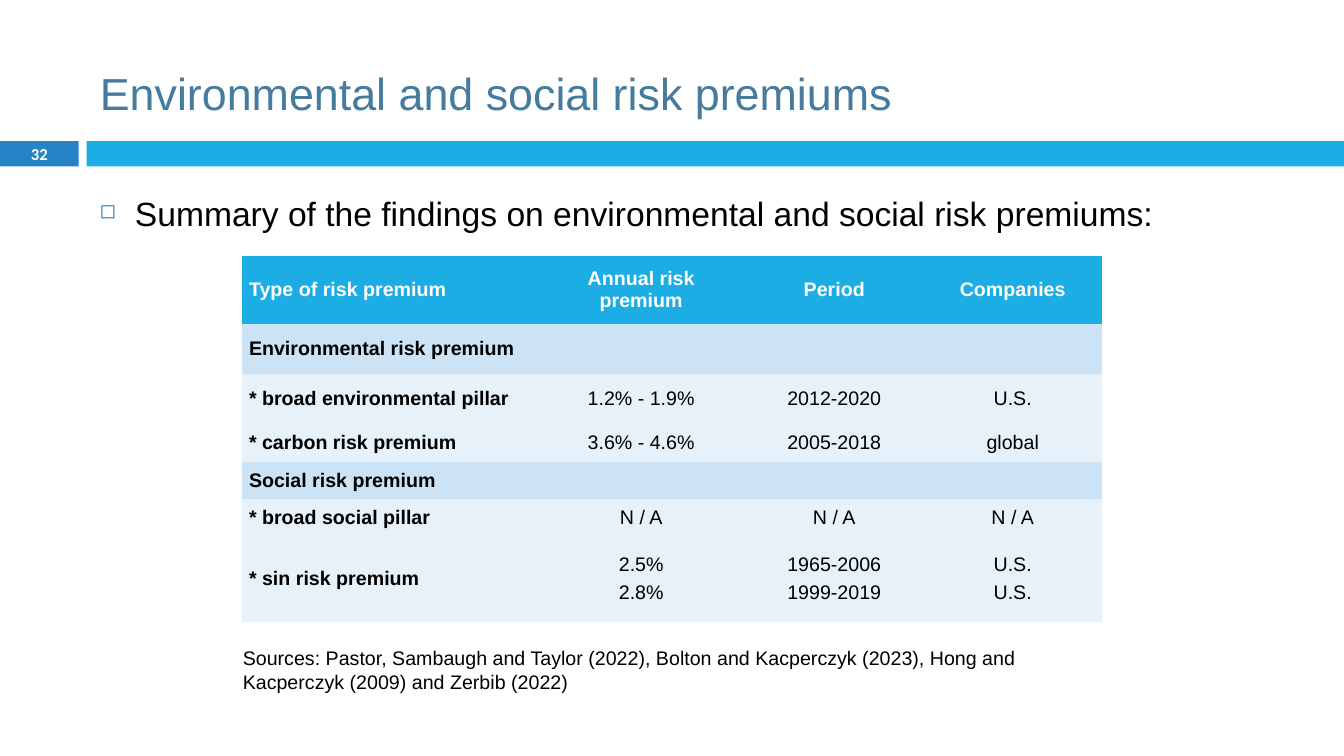
from lxml import etree
from pptx import Presentation
from pptx.dml.color import RGBColor
from pptx.enum.shapes import MSO_SHAPE as Shape
from pptx.enum.text import MSO_ANCHOR as Anchor, MSO_AUTO_SIZE as AutoSize, PP_ALIGN as Align
from pptx.oxml.ns import qn
from pptx.util import Inches, Pt

WHITE = RGBColor(0xFF, 0xFF, 0xFF)
BLACK = RGBColor(0, 0, 0)
TITLE_BLUE = RGBColor(0x45, 0x7B, 0x9E)
DARK_BLUE = RGBColor(0x26, 0x83, 0xC6)
BRIGHT_BLUE = RGBColor(0x1C, 0xAD, 0xE4)
SECTION_BLUE = RGBColor(0xCC, 0xE3, 0xF5)
PALE_BLUE = RGBColor(0xE7, 0xF1, 0xFA)
PLAIN_TABLE = "{2D5ABB26-0587-4C30-8999-92F81FD0307C}"

HEADER = ["Type of risk premium", "Annual risk premium", "Period", "Companies"]
ROWS = [
    HEADER,
    ["Environmental risk premium"],
    ["* broad environmental pillar", "1.2% - 1.9%", "2012-2020", "U.S."],
    ["* carbon risk premium", "3.6% - 4.6%", "2005-2018", "global"],
    ["Social risk premium"],
    ["* broad social pillar", "N / A", "N / A", "N / A"],
    ["* sin risk premium", "2.5%\n2.8%", "1965-2006\n1999-2019", "U.S.\nU.S."],
]
COLUMN_WIDTHS = [2.93, 2.06, 1.77, 1.77]
ROW_HEIGHTS = [0.67, 0.5, 0.5, 0.37, 0.37, 0.37, 0.85]


class SlideBuilder:
    """Holds the text style and the current page."""

    def __init__(self, page, font="Arial"):
        self.page = page
        self.font = font

    def style(self, para, size, color=BLACK, bold=False, align=Align.LEFT, font=None):
        para.font.name = font or self.font
        para.font.size = Pt(size)
        para.font.bold = bold
        para.font.color.rgb = color
        para.alignment = align

    def title(self, text, left, top, width, height):
        box = self.page.shapes.title
        box.left, box.top, box.width, box.height = map(Inches, (left, top, width, height))
        frame = box.text_frame
        frame.text = text
        frame.auto_size = AutoSize.NONE
        frame.vertical_anchor = Anchor.MIDDLE
        self.style(frame.paragraphs[0], 32, TITLE_BLUE)
        frame.paragraphs[0].line_spacing = 1.5

    def bar(self, left, top, width, height, color):
        bar = self.page.shapes.add_shape(
            Shape.RECTANGLE, *map(Inches, (left, top, width, height)))
        bar.shadow.inherit = False
        bar.fill.solid()
        bar.fill.fore_color.rgb = color
        bar.line.fill.background()

    def text(self, text, left, top, width, height, size, anchor=Anchor.TOP, **style):
        box = self.page.shapes.add_textbox(*map(Inches, (left, top, width, height)))
        frame = box.text_frame
        frame.word_wrap = True
        frame.vertical_anchor = anchor
        para = frame.paragraphs[0]
        para.text = text
        self.style(para, size, **style)
        return para

    def bullet(self, text, left, top, width, height):
        para = self.text(text, left, top, width, height, 24, align=Align.JUSTIFY)
        para.line_spacing = 1.5
        para.space_before = Pt(7)
        props = para._p.get_or_add_pPr()
        props.set("marL", str(Inches(0.35)))
        props.set("indent", str(-Inches(0.35)))
        # Bullet marks stand before the default run properties
        defaults = props.find(qn("a:defRPr"))
        color = etree.Element(qn("a:buClr"))
        etree.SubElement(color, qn("a:srgbClr"), val=str(DARK_BLUE))
        size = etree.Element(qn("a:buSzPct"), val="60000")
        mark = etree.Element(qn("a:buChar"), char="◻")
        for item in (color, size, mark):
            defaults.addprevious(item)

    def table(self, rows, left, top, widths, heights):
        holder = self.page.shapes.add_table(
            len(rows), len(widths), Inches(left), Inches(top),
            Inches(sum(widths)), Inches(sum(heights)))
        next(holder._element.iter(qn("a:tableStyleId"))).text = PLAIN_TABLE
        table = holder.table
        table.horz_banding = False
        for column, width in zip(table.columns, widths):
            column.width = Inches(width)
        for r, (values, height) in enumerate(zip(rows, heights)):
            table.rows[r].height = Inches(height)
            fill = BRIGHT_BLUE if r == 0 else SECTION_BLUE if len(values) == 1 else PALE_BLUE
            for c in range(len(widths)):
                value = values[c] if c < len(values) else ""
                self.cell(table.cell(r, c), value, fill, header=r == 0, label=c == 0)

    def cell(self, cell, value, fill, header, label):
        cell.fill.solid()
        cell.fill.fore_color.rgb = fill
        cell.vertical_anchor = Anchor.MIDDLE
        cell.margin_left = cell.margin_right = Inches(0.07)
        cell.margin_top = cell.margin_bottom = 0
        cell.text = value
        for para in cell.text_frame.paragraphs:
            self.style(para, 14, WHITE if header else BLACK, header or label,
                       Align.LEFT if label else Align.CENTER)
            para.space_before = para.space_after = Pt(3 if header else 2)


def main():
    deck = Presentation()
    deck.slide_width, deck.slide_height = Inches(13.33), Inches(7.5)
    builder = SlideBuilder(deck.slides.add_slide(deck.slide_layouts[5]))

    # Title, band and page number
    builder.bar(0, 1.4, 0.78, 0.25, DARK_BLUE)
    builder.bar(0.86, 1.4, 12.47, 0.25, BRIGHT_BLUE)
    builder.title("Environmental and social risk premiums", 0.89, 0.25, 11.89, 1.08)
    builder.text("32", 0, 1.39, 0.78, 0.27, 11.9, Anchor.MIDDLE, color=WHITE,
                 bold=True, align=Align.CENTER, font="Calibri")

    # Summary, findings and sources
    builder.bullet("Summary of the findings on environmental and social risk premiums:",
                   0.89, 1.66, 11.36, 0.8)
    builder.table(ROWS, 2.4, 2.54, COLUMN_WIDTHS, ROW_HEIGHTS)
    builder.text("Sources: Pastor, Sambaugh and Taylor (2022), Bolton and Kacperczyk (2023), "
                 "Hong and Kacperczyk (2009) and Zerbib (2022)",
                 2.31, 6.36, 8.54, 0.57, 14)

    deck.save("out.pptx")


if __name__ == "__main__":
    main()
